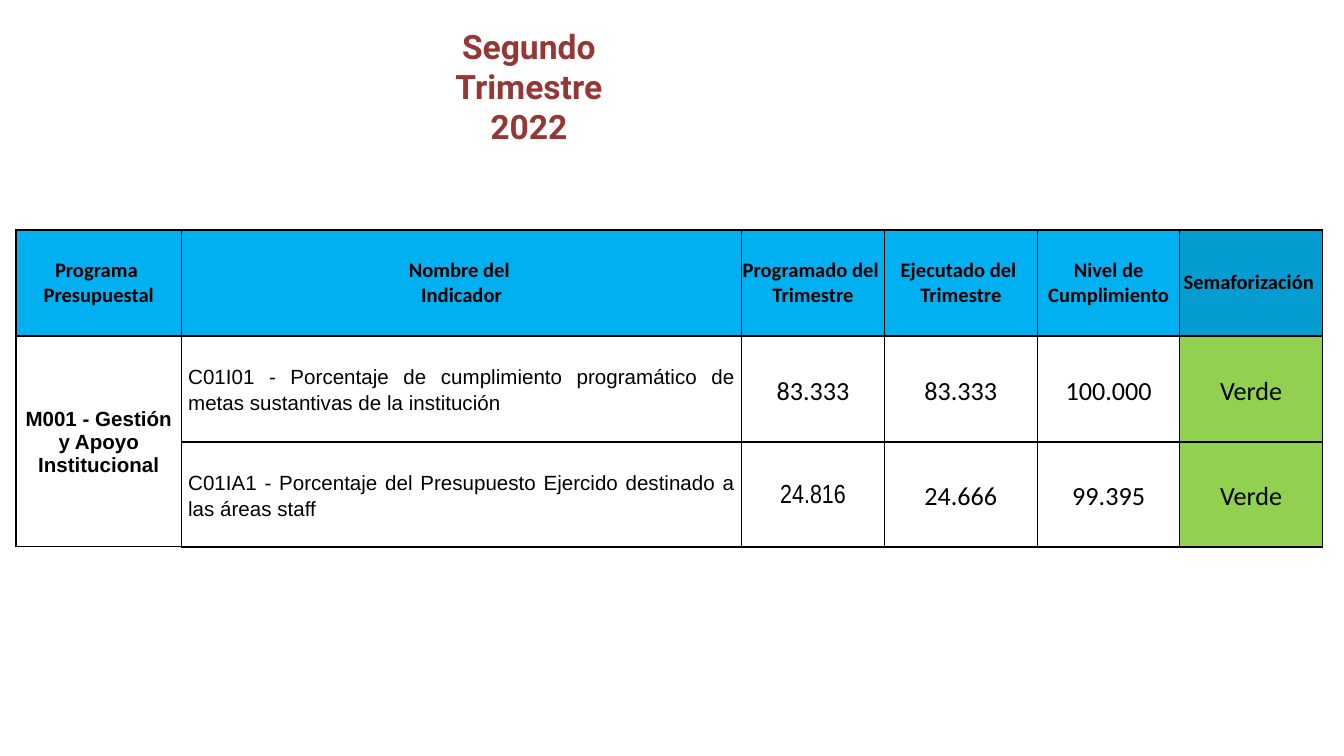
from lxml import etree
from pptx import Presentation
from pptx.dml.color import RGBColor
from pptx.enum import text
from pptx.oxml import ns
from pptx.util import Inches, Pt

BLACK = RGBColor(0x00, 0x00, 0x00)
MAROON = RGBColor(0x95, 0x37, 0x35)
BLUE = RGBColor(0x00, 0xB0, 0xF0)
DARK_BLUE = RGBColor(0x05, 0x9C, 0xD1)
GREEN = RGBColor(0x92, 0xD0, 0x50)

CENTER = text.PP_ALIGN.CENTER
JUSTIFY = text.PP_ALIGN.JUSTIFY


def set_borders(cell, widths):
    """Draw black cell borders; widths maps L, R, T, B to points."""
    properties = cell._tc.get_or_add_tcPr()
    for side in "LRTB":
        line = etree.SubElement(properties, ns.qn(f"a:ln{side}"), w=str(Pt(widths[side])))
        fill = etree.SubElement(line, ns.qn("a:solidFill"))
        etree.SubElement(fill, ns.qn("a:srgbClr"), val=str(BLACK))


def write_cell(cell, content, font, size, bold, align, spacing, margins):
    cell.text_frame.text = content
    cell.vertical_anchor = text.MSO_ANCHOR.MIDDLE
    cell.margin_left = cell.margin_right = Inches(margins[0])
    cell.margin_top, cell.margin_bottom = Inches(margins[1]), 0
    for para in cell.text_frame.paragraphs:
        para.alignment = align
        para.line_spacing = spacing
        for span in para.runs:
            span.font.name = font
            span.font.size = Pt(size)
            span.font.bold = bold
            span.font.color.rgb = BLACK


# Widescreen 16:9 page
deck = Presentation()
deck.slide_width = Inches(10)
deck.slide_height = Inches(10 * 9 / 16)
page = deck.slides.add_slide(deck.slide_layouts[5])

# Title
title = page.shapes.title
title.left, title.top = Inches(3.11), Inches(0.14)
title.width, title.height = Inches(1.65), Inches(1.01)
frame = title.text_frame
frame.text = "Segundo Trimestre 2022"
frame.word_wrap = True
frame.auto_size = text.MSO_AUTO_SIZE.SHAPE_TO_FIT_TEXT
frame.vertical_anchor = text.MSO_ANCHOR.TOP
para = frame.paragraphs[0]
para.alignment = CENTER
span = para.runs[0]
span.font.name = "Roboto"
span.font.size = Pt(18)
span.font.bold = True
span.font.color.rgb = MAROON

# Table grid
headers = ["Programa \nPresupuestal", "Nombre del \nIndicador",
           "Programado del \nTrimestre", "Ejecutado del \nTrimestre",
           "Nivel de Cumplimiento", "Semaforización "]
indicators = [
    ["C01I01 - Porcentaje de cumplimiento programático de metas sustantivas de la institución",
     "83.333", "83.333", "100.000", "Verde"],
    ["C01IA1 - Porcentaje del Presupuesto Ejercido destinado a las áreas staff",
     "24.816", "24.666", "99.395", "Verde"],
]
column_widths = [1.23, 4.17, 1.06, 1.14, 1.06, 1.06]
row_heights = [0.79, 0.79, 0.78]
table = page.shapes.add_table(len(row_heights), len(column_widths), Inches(0.12), Inches(1.71),
                              Inches(sum(column_widths)), Inches(sum(row_heights))).table
table.first_row = table.horz_banding = False
for column, width in zip(table.columns, column_widths):
    column.width = Inches(width)
for row, height in zip(table.rows, row_heights):
    row.height = Inches(height)

# Borders: thin verticals, thicker horizontals and outer left edge
for row in range(len(row_heights)):
    for column in range(len(column_widths)):
        cell = table.cell(row, column)
        program = column == 0 and row > 0
        set_borders(cell, {"L": 1 if column == 0 else 0.5, "R": 0.5,
                           "T": 1, "B": 0.5 if program else 1})
        cell.fill.background()

# Header row
for column, header in enumerate(headers):
    cell = table.cell(0, column)
    write_cell(cell, header, "Calibri", 11, True, CENTER, 1.0, (0, 0))
    cell.fill.solid()
    cell.fill.fore_color.rgb = DARK_BLUE if column == len(headers) - 1 else BLUE

# Programme cell spanning both indicators
program_cell = table.cell(1, 0)
program_cell.merge(table.cell(2, 0))
write_cell(program_cell, "M001 - Gestión y Apoyo Institucional", "Arial", 11, True,
           CENTER, 1.0, (0.01, 0.01))

# Indicator rows
for row, (name, *results) in enumerate(indicators, start=1):
    write_cell(table.cell(row, 1), name, "Arial", 11, False, JUSTIFY, 1.15, (0.05, 0))
    for column, result in enumerate(results, start=2):
        font = "Arial Narrow" if (row, column) == (2, 2) else "Calibri"
        write_cell(table.cell(row, column), result, font, 14, False, CENTER, 1.15, (0.05, 0))
    status = table.cell(row, len(headers) - 1)
    status.fill.solid()
    status.fill.fore_color.rgb = GREEN

deck.save("out.pptx")
